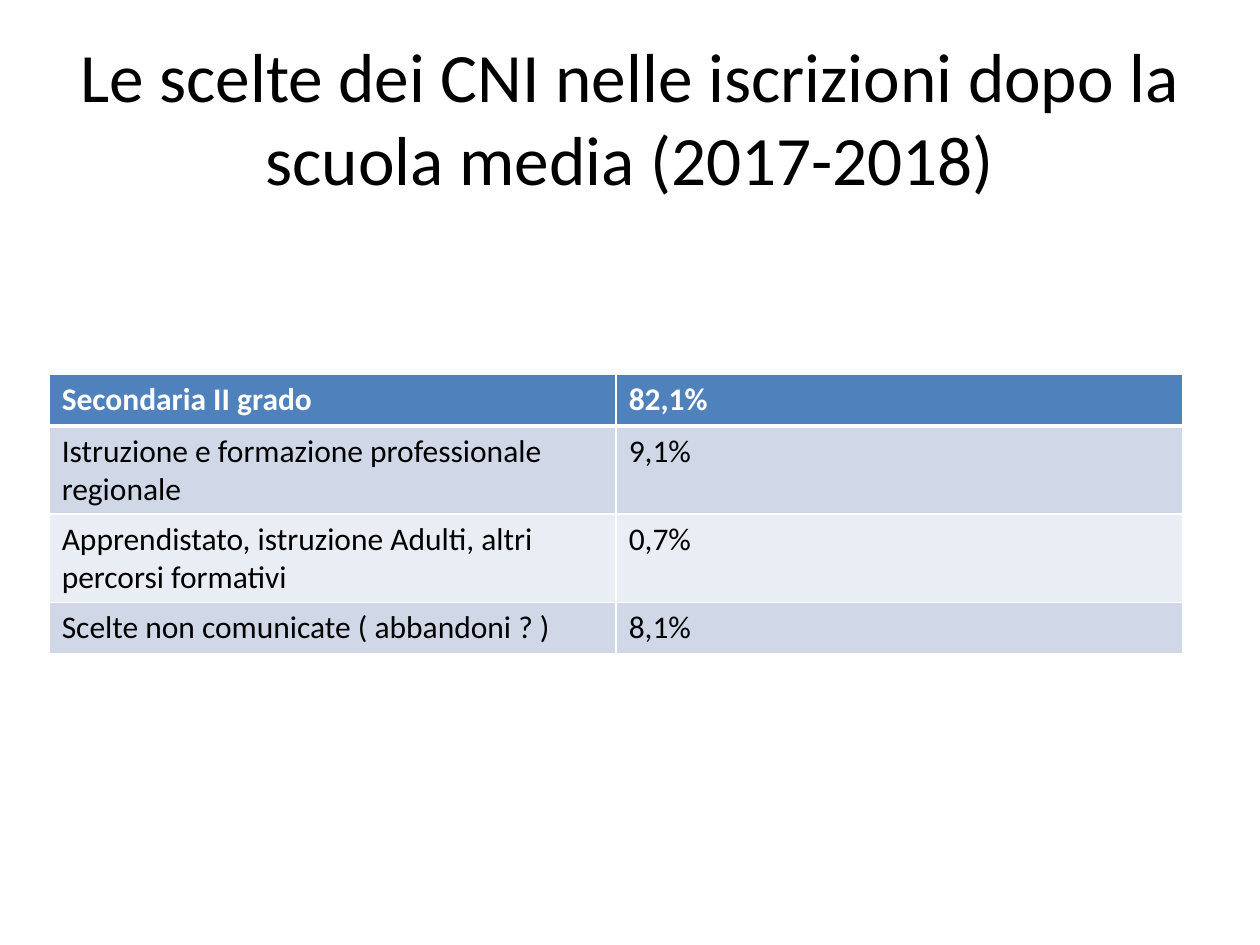
import pptx
import pptx.dml.color
import pptx.enum.text
import pptx.oxml.ns
import pptx.util
from lxml import etree
from pptx.util import Inches

WHITE = pptx.dml.color.RGBColor(0xFF, 0xFF, 0xFF)
BLACK = pptx.dml.color.RGBColor(0x00, 0x00, 0x00)
HEADER_BLUE = pptx.dml.color.RGBColor(0x4F, 0x81, 0xBD)
BAND_DARK = pptx.dml.color.RGBColor(0xD0, 0xD8, 0xE8)
BAND_LIGHT = pptx.dml.color.RGBColor(0xE9, 0xED, 0xF4)

ROWS = [
    ("Secondaria II grado", "82,1%"),
    ("Istruzione e formazione professionale regionale", "9,1%"),
    ("Apprendistato, istruzione Adulti, altri percorsi formativi", "0,7%"),
    ("Scelte non comunicate ( abbandoni ? )", "8,1%"),
]


def write_text(frame, text, size=18, color=BLACK, bold=False,
               align=pptx.enum.text.PP_ALIGN.LEFT):
    frame.word_wrap = True
    paragraph = frame.paragraphs[0]
    paragraph.alignment = align
    run = paragraph.add_run()
    run.text = text
    run.font.name = "Calibri"
    run.font.size = pptx.util.Pt(size)
    run.font.bold = bold
    run.font.color.rgb = color


def add_border(cell, side, width, color=WHITE):
    """Draw one side ("L", "R", "T" or "B") of a cell, width in points."""
    qn = pptx.oxml.ns.qn
    properties = cell._tc.get_or_add_tcPr()
    line = etree.SubElement(properties, qn(f"a:ln{side}"), w=str(pptx.util.Pt(width)))
    fill = etree.SubElement(line, qn("a:solidFill"))
    etree.SubElement(fill, qn("a:srgbClr"), val=str(color))


presentation = pptx.Presentation()
presentation.slide_width = Inches(10)
presentation.slide_height = Inches(7.5)
slide = presentation.slides.add_slide(presentation.slide_layouts[6])

title = slide.shapes.add_textbox(Inches(0.5), Inches(0.3), Inches(9), Inches(1.25))
title.text_frame.vertical_anchor = pptx.enum.text.MSO_ANCHOR.MIDDLE
write_text(title.text_frame, "Le scelte dei CNI nelle iscrizioni dopo la scuola media (2017-2018)",
           size=39.6, align=pptx.enum.text.PP_ALIGN.CENTER)

row_height = Inches(0.41)
table = slide.shapes.add_table(len(ROWS), 2, Inches(0.39), Inches(2.97),
                               Inches(9), row_height * len(ROWS)).table
for row_index, row in enumerate(ROWS):
    table.rows[row_index].height = row_height
    is_header = row_index == 0
    if is_header:
        background = HEADER_BLUE
    else:
        background = BAND_DARK if row_index % 2 else BAND_LIGHT
    for column_index, text in enumerate(row):
        cell = table.cell(row_index, column_index)
        write_text(cell.text_frame, text, color=WHITE if is_header else BLACK, bold=is_header)
        top_width = 3 if row_index == 1 else 1
        bottom_width = 3 if is_header else 1
        for side, width in (("L", 1), ("R", 1), ("T", top_width), ("B", bottom_width)):
            add_border(cell, side, width)
        cell.fill.solid()
        cell.fill.fore_color.rgb = background

presentation.save("out.pptx")
